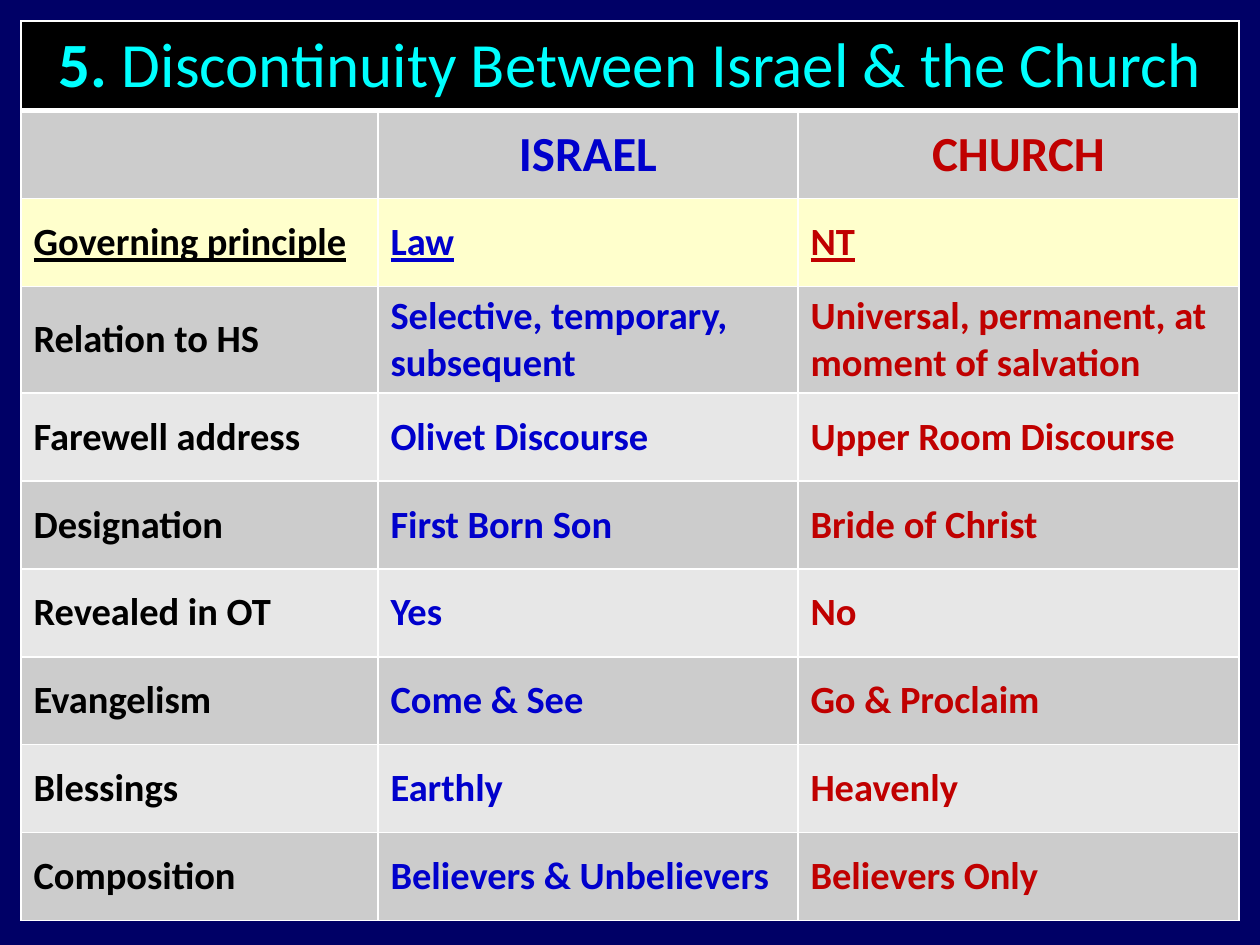
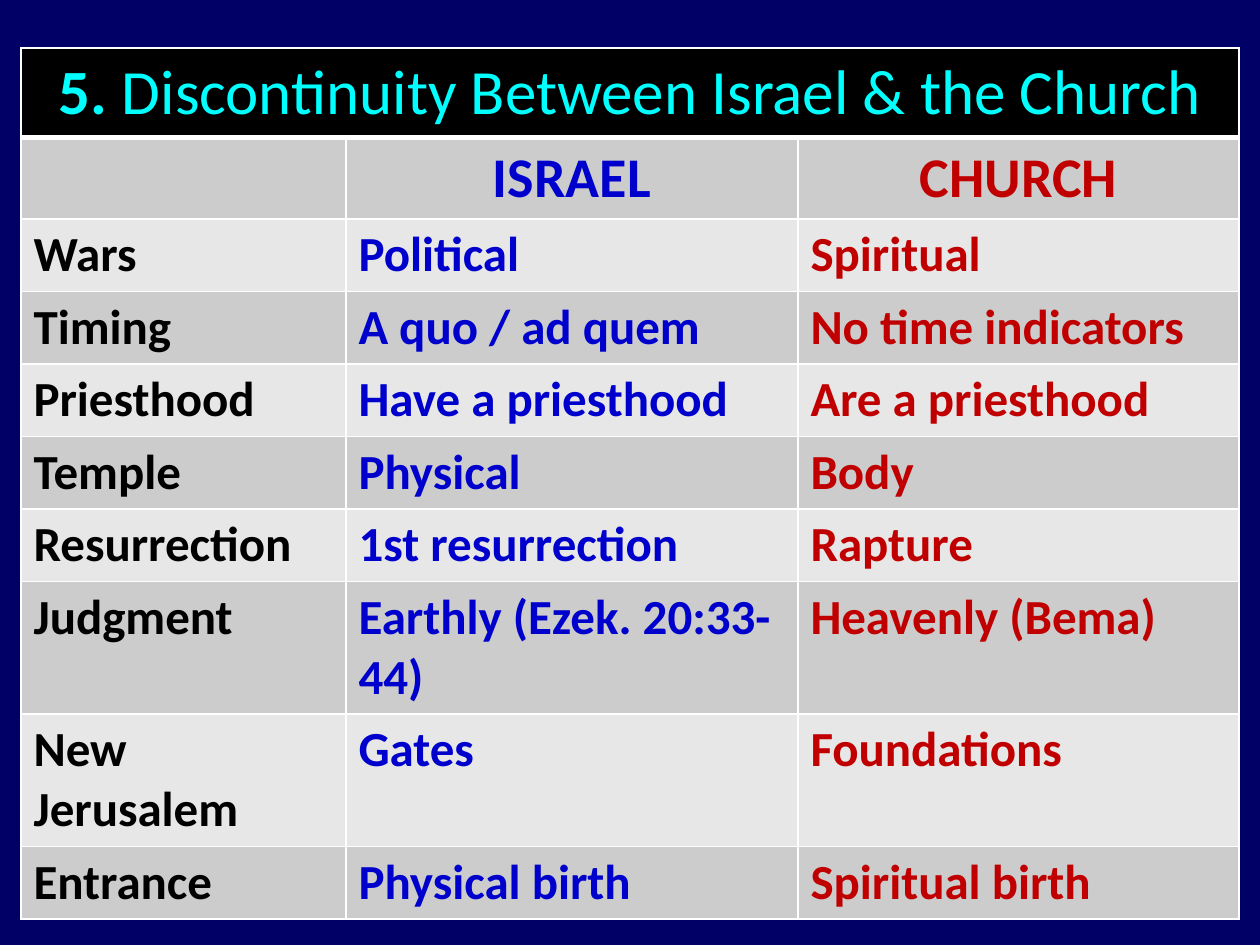
from lxml.etree import SubElement
from pptx import Presentation
from pptx.dml.color import RGBColor
from pptx.enum.text import MSO_ANCHOR as Anchor, PP_ALIGN as Align
from pptx.oxml.ns import qn
from pptx.util import Emu, Pt

SCALE = 914400 / 126
FONT = "Calibri"
NAVY, BLACK, WHITE, CYAN = "000066", "000000", "FFFFFF", "00FFFF"
BLUE, RED, CREAM = "0000CC", "C00000", "FFFFCC"
BANDS = "E7E7E7", "CCCCCC"
INKS = BLACK, BLUE, RED
LEFT, LAST_COL = 21, 441

LIFE = [
    ("Governing principle", "Law", "NT"),
    ("Relation to HS", "Selective, temporary, subsequent",
     "Universal, permanent, at moment of salvation"),
    ("Farewell address", "Olivet Discourse", "Upper Room Discourse"),
    ("Designation", "First Born Son", "Bride of Christ"),
    ("Revealed in OT", "Yes", "No"),
    ("Evangelism", "Come & See", "Go & Proclaim"),
    ("Blessings", "Earthly", "Heavenly"),
    ("Composition", "Believers & Unbelievers", "Believers Only"),
]
FUTURE = [
    ("Wars", "Political", "Spiritual"),
    ("Timing", "A quo / ad quem", "No time indicators"),
    ("Priesthood", "Have a priesthood", "Are a priesthood"),
    ("Temple", "Physical", "Body"),
    ("Resurrection", "1st resurrection", "Rapture"),
    ("Judgment", "Earthly (Ezek. 20:33-44)", "Heavenly (Bema)"),
    ("New Jerusalem", "Gates", "Foundations"),
    ("Entrance", "Physical birth", "Spiritual birth"),
]


def px(num):
    return Emu(round(num * SCALE))


def rgb(code):
    return RGBColor.from_string(code)


class Deck:
    def __init__(self):
        self.prs = Presentation()
        self.prs.slide_width, self.prs.slide_height = px(1260), px(945)
        fill = self.prs.slide_master.background.fill
        fill.solid()
        fill.fore_color.rgb = rgb(NAVY)
        self.slide = None

    def page(self):
        self.slide = self.prs.slides.add_slide(self.prs.slide_layouts[6])

    def edge(self, cell, side, width):
        line = SubElement(cell._tc.get_or_add_tcPr(), qn(f"a:ln{side}"),
                          w=str(Pt(width)))
        paint = SubElement(line, qn("a:solidFill"))
        SubElement(paint, qn("a:srgbClr"), val=WHITE)

    def box(self, cell, color, top=1, base=1):
        """Give a cell its white edges and its fill."""
        for side, width in zip("LRTB", (1, 1, top, base)):
            self.edge(cell, side, width)
        cell.fill.solid()
        cell.fill.fore_color.rgb = rgb(color)

    def label(self, cell, runs, size, ink, align=None, anchor=Anchor.MIDDLE,
              under=None):
        """Fill a cell with runs, each a pair of text and bold."""
        cell.vertical_anchor = anchor
        para = cell.text_frame.paragraphs[0]
        para.alignment = align
        gap = SubElement(para._p.get_or_add_pPr(), qn("a:spcBef"))
        SubElement(gap, qn("a:spcPct"), val="20000")
        for text, bold in runs:
            run = para.add_run()
            run.text = text
            font = run.font
            font.name, font.size, font.bold = FONT, Pt(size), bold
            font.underline = under
            font.color.rgb = rgb(ink)

    def table(self, rows, top, high, step, cols, head, size, anchor, mark=None):
        """Add the comparison table; mark is the row to stress, if any."""
        frame = self.slide.shapes.add_table(
            len(rows) + 2, 3, px(LEFT), px(top), px(sum(cols)), px(high))
        grid = frame.table
        for col, width in zip(grid.columns, cols):
            col.width = px(width)
        for row in grid.rows:
            row.height = px(step)
        frame.height = px(high)

        for cell in grid.rows[0].cells:
            self.box(cell, BLACK, base=3)
        title = grid.cell(0, 0)
        title.merge(grid.cell(0, 2))
        self.label(title, [("5. ", True),
                           ("Discontinuity Between Israel & the Church", False)],
                   36, CYAN, Align.CENTER)

        for cell in grid.rows[1].cells:
            self.box(cell, BANDS[1], top=3)
        for at, name in enumerate(("ISRAEL", "CHURCH"), 1):
            self.label(grid.cell(1, at), [(name, True)], head, INKS[at],
                       Align.CENTER)

        for at, texts in enumerate(rows):
            stress = at == mark
            for col, (text, ink) in enumerate(zip(texts, INKS)):
                cell = grid.cell(at + 2, col)
                self.box(cell, CREAM if stress else BANDS[at % 2])
                self.label(cell, [(text, True)], size, ink, anchor=anchor,
                           under=stress or None)


def main():
    deck = Deck()
    deck.page()
    deck.table(LIFE, 21, 898, 88, (357, 420, LAST_COL), 28, 22,
               Anchor.MIDDLE, mark=0)
    deck.page()
    deck.table(FUTURE, 48, 857, 63, (325, 452, LAST_COL), 32, 28, Anchor.TOP)
    deck.prs.save("out.pptx")


if __name__ == "__main__":
    main()
